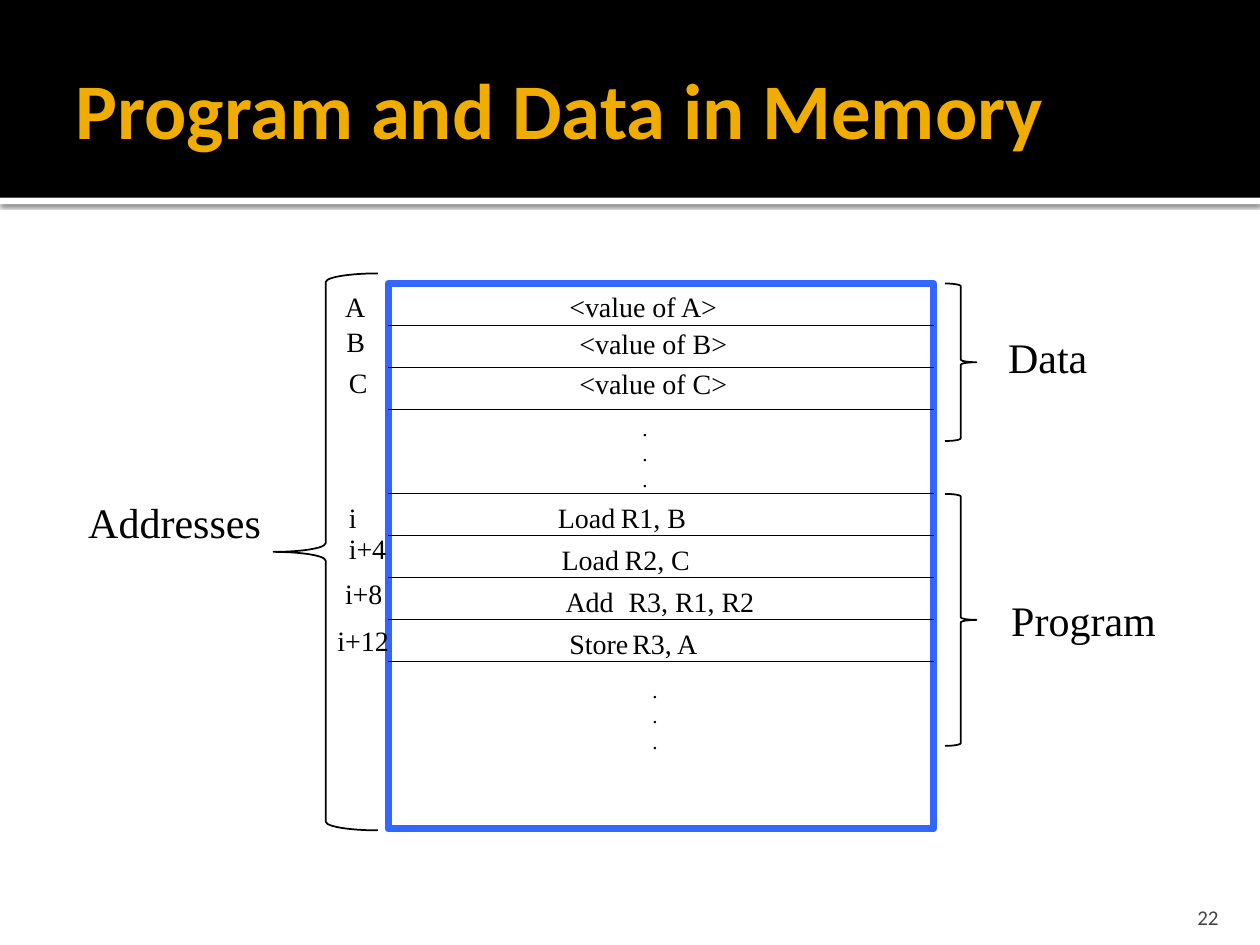
from lxml.etree import SubElement
from pptx import Presentation
from pptx.dml.color import RGBColor
from pptx.enum.shapes import MSO_CONNECTOR, MSO_SHAPE
from pptx.enum.text import MSO_ANCHOR, MSO_AUTO_SIZE, PP_ALIGN
from pptx.oxml.ns import qn
from pptx.util import Inches, Pt

BLACK = RGBColor(0, 0, 0)
WHITE = RGBColor(0xFF, 0xFF, 0xFF)
GOLD = RGBColor(0xF0, 0xAD, 0x00)
BLUE = RGBColor(0x33, 0x66, 0xFF)
GRAY = RGBColor(0x45, 0x45, 0x45)
SERIF, SANS = "Times New Roman", "Calibri"

TITLE = "Program and Data in Memory"
PAGE = "22"

# Memory box: rows of equal height, ruled below the listed row numbers
LEFT, TOP, SIZE = 3.08, 2.25, 4.33
ROW = 1 / 3
RULES = (1, 2, 3, 5, 6, 7, 8, 9)

# text, left, top
ADDRESSES = [
    ("A", 2.64, 2.25), ("B", 2.65, 2.53), ("C", 2.67, 2.85),
    ("i", 2.67, 3.92), ("i+4", 2.67, 4.17),
    ("i+8", 2.64, 4.53), ("i+12", 2.58, 4.9),
]
VALUES = [
    ("<value of A>", 4.42, 2.25),
    ("<value of B>", 4.5, 2.54),
    ("<value of C>", 4.5, 2.86),
]
CODE = ["Load\tR1, B", "Load\tR2, C", "Add\tR3, R1, R2", "Store\tR3, A"]
CODE_LEFT, CODE_TOP, CODE_STEP = 4.33, 3.92, 0.03
DOTS = [(5, 3.25), (5.08, 5.33)]
# text, left, top, width
LABELS = [
    ("Data", 7.89, 2.58, 0.85),
    ("Program", 7.92, 4.67, 1.36),
    ("Addresses", 0.59, 3.89, 1.59),
]
# shape, left, top, width, height
BRACES = [
    (MSO_SHAPE.RIGHT_BRACE, 7.5, 2.25, 0.25, 1.25),
    (MSO_SHAPE.RIGHT_BRACE, 7.5, 3.92, 0.25, 2),
    (MSO_SHAPE.LEFT_BRACE, 2.17, 2.17, 0.83, 4.42),
]


def add_shape(slide, kind, at, fill=None, line=None, width=1):
    shape = slide.shapes.add_shape(kind, *map(Inches, at))
    shape.shadow.inherit = False
    if fill is None:
        shape.fill.background()
    else:
        shape.fill.solid()
        shape.fill.fore_color.rgb = fill
    if line is None:
        shape.line.fill.background()
    else:
        shape.line.color.rgb = line
        shape.line.width = Pt(width)
    return shape


def add_glow(shape):
    """Give the shape a soft gray shadow straight below it."""
    effects = shape._element.spPr.find(qn("a:effectLst"))
    shadow = SubElement(effects, qn("a:outerShdw"), blurRad=str(Pt(2.5)),
                        dist=str(Pt(0.8)), dir="5400000", rotWithShape="0")
    color = SubElement(shadow, qn("a:srgbClr"), val="000000")
    SubElement(color, qn("a:alpha"), val="60000")


def add_rule(slide, y):
    rule = slide.shapes.add_connector(
        MSO_CONNECTOR.STRAIGHT, Inches(LEFT), Inches(y),
        Inches(LEFT + SIZE), Inches(y))
    rule.line.color.rgb = BLACK
    rule.line.width = Pt(1)
    SubElement(rule._element.spPr, qn("a:effectLst"))


def write(para, text, size, font=SERIF, color=BLACK, bold=False):
    run = para.add_run()
    run.text = text
    run.font.size = Pt(size)
    run.font.name = font
    run.font.color.rgb = color
    run.font.bold = bold


def add_text(slide, lines, at, size, wrap=False, align=PP_ALIGN.LEFT):
    box = slide.shapes.add_textbox(*map(Inches, at))
    frame = box.text_frame
    frame.word_wrap = wrap
    frame.auto_size = MSO_AUTO_SIZE.SHAPE_TO_FIT_TEXT
    for i, line in enumerate(lines):
        para = frame.add_paragraph() if i else frame.paragraphs[0]
        para.alignment = align
        write(para, line, size)


def add_head(slide):
    add_glow(add_shape(slide, MSO_SHAPE.RECTANGLE, (0, 1.57, 10, 0.05), WHITE))
    add_shape(slide, MSO_SHAPE.RECTANGLE, (0, 0, 10, 1.57), BLACK)
    title = slide.shapes.title
    slide.shapes._spTree.append(title._element)  # bring above the band
    title.left, title.top = Inches(0.5), Inches(0.17)
    title.width, title.height = Inches(9), Inches(1.37)
    frame = title.text_frame
    frame.auto_size = MSO_AUTO_SIZE.NONE
    frame.vertical_anchor = MSO_ANCHOR.MIDDLE
    frame.margin_right = Inches(0.05)
    frame.paragraphs[0].alignment = PP_ALIGN.LEFT
    write(frame.paragraphs[0], TITLE, 45, SANS, GOLD, True)


def add_page(slide):
    box = slide.shapes.add_textbox(
        Inches(8.97), Inches(7.08), Inches(0.8), Inches(0.3))
    frame = box.text_frame
    frame.word_wrap = True
    frame.vertical_anchor = MSO_ANCHOR.BOTTOM
    frame.margin_bottom = 0
    frame.paragraphs[0].alignment = PP_ALIGN.RIGHT
    write(frame.paragraphs[0], PAGE, 12, SANS, GRAY)


def add_memory(slide):
    add_shape(slide, MSO_SHAPE.RECTANGLE, (LEFT, TOP, SIZE, SIZE),
              line=BLUE, width=4)
    for n in RULES:
        add_rule(slide, TOP + n * ROW)
    for x, y in DOTS:
        add_text(slide, "...", (x, y, 0.24, 0.71), 12)
    for text, x, y in ADDRESSES:
        width = 0.26 + 0.12 * (len(text) - 1)
        add_text(slide, [text], (x, y, width, 0.37), 16)
    for text, x, y in VALUES:
        add_text(slide, [text], (x, y, 1.83, 0.37), 16, wrap=True)
    for i, text in enumerate(CODE):
        at = (CODE_LEFT + i * CODE_STEP, CODE_TOP + i * ROW, 2.36, 0.37)
        add_text(slide, [text], at, 16, wrap=True)


def main():
    deck = Presentation()
    deck.slide_width, deck.slide_height = Inches(10), Inches(7.5)
    slide = deck.slides.add_slide(deck.slide_layouts[5])
    add_head(slide)
    add_page(slide)
    add_memory(slide)
    for kind, *at in BRACES:
        add_shape(slide, kind, at, line=BLACK)
    for text, x, y, width in LABELS:
        add_text(slide, [text], (x, y, width, 0.5), 24, align=PP_ALIGN.CENTER)
    deck.save("out.pptx")


if __name__ == "__main__":
    main()
